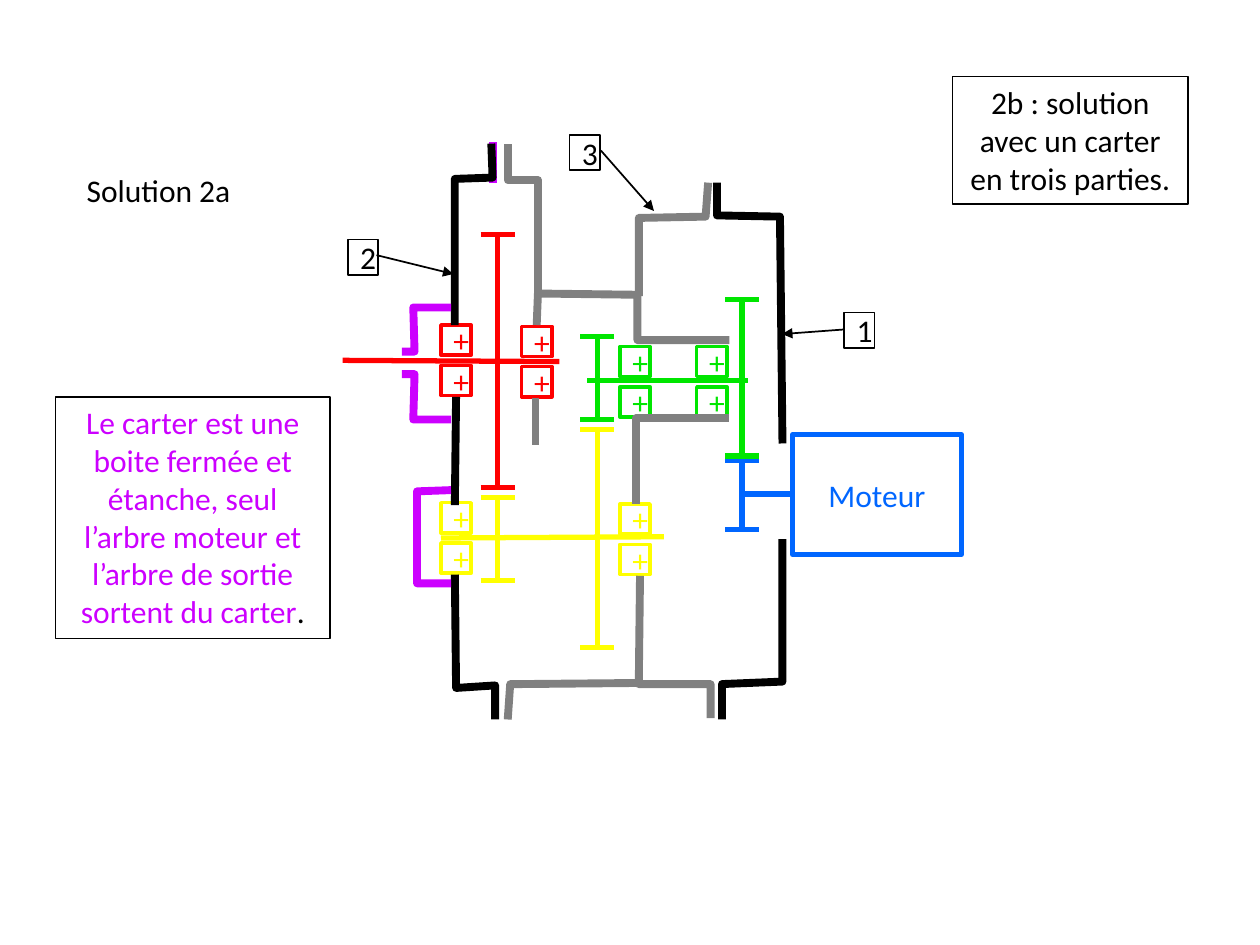
from dataclasses import dataclass

from lxml import etree
from pptx import Presentation
from pptx.dml.color import RGBColor
from pptx.enum.shapes import MSO_CONNECTOR, MSO_SHAPE
from pptx.enum.text import MSO_ANCHOR, MSO_AUTO_SIZE, PP_ALIGN
from pptx.oxml.ns import qn
from pptx.util import Inches, Pt

STRAIGHT = MSO_CONNECTOR.STRAIGHT
RECT, CALLOUT = MSO_SHAPE.RECTANGLE, MSO_SHAPE.LINE_CALLOUT_1
TOP, MIDDLE = MSO_ANCHOR.TOP, MSO_ANCHOR.MIDDLE
LEFT, CENTER = PP_ALIGN.LEFT, PP_ALIGN.CENTER
GROW = MSO_AUTO_SIZE.SHAPE_TO_FIT_TEXT


@dataclass(frozen=True)
class Theme:
    font: str = "Calibri"
    size: float = 18
    black: str = "000000"
    white: str = "FFFFFF"
    grey: str = "808080"
    red: str = "FF0000"
    blue: str = "0066FF"
    green: str = "00E600"
    yellow: str = "FFFF00"
    violet: str = "CC00FF"
    thin: float = 0.75
    shaft: float = 3
    wall: float = 4.5


THEME = Theme()


def write(shape, *parts, anchor=MIDDLE, align=CENTER, wrap=True, grow=False):
    """Fill the shape with one paragraph of (text, colour) parts."""
    frame = shape.text_frame
    frame.word_wrap = wrap
    frame.vertical_anchor = anchor
    if grow:
        frame.auto_size = GROW
    para = frame.paragraphs[0]
    para.alignment = align
    for text, color in parts:
        run = para.add_run()
        run.text = text
        run.font.name = THEME.font
        run.font.size = Pt(THEME.size)
        run.font.color.rgb = RGBColor.from_string(color)


def stroke(shape, color, width):
    shape.line.color.rgb = RGBColor.from_string(color)
    shape.line.width = Pt(width)


def line(slide, x1, y1, x2, y2, color, width=THEME.shaft):
    item = slide.shapes.add_connector(
        STRAIGHT, Inches(x1), Inches(y1), Inches(x2), Inches(y2))
    stroke(item, color, width)
    etree.SubElement(item._element.spPr, qn("a:effectLst"))


def wall(slide, color, *points):
    """Draw one open run of the housing."""
    first, *rest = [(Inches(x), Inches(y)) for x, y in points]
    pen = slide.shapes.build_freeform(*first)
    pen.add_line_segments(rest, close=False)
    item = pen.convert_to_shape()
    item.shadow.inherit = False
    item.fill.background()
    stroke(item, color, THEME.wall)


def box(slide, x, y, w, h, color, width, kind=RECT, fill=THEME.white):
    item = slide.shapes.add_shape(
        kind, Inches(x), Inches(y), Inches(w), Inches(h))
    item.shadow.inherit = False
    if fill:
        item.fill.solid()
        item.fill.fore_color.rgb = RGBColor.from_string(fill)
    else:
        item.fill.background()
    stroke(item, color, width)
    return item


def gear(slide, x, top, bottom, color, half=0.135):
    line(slide, x, top, x, bottom, color)
    for y in (top, bottom):
        line(slide, x - half, y, x + half, y, color)


def bearing(slide, x, y, color, side=0.24, pitch=0.32):
    for row in range(2):
        item = box(slide, x, y + row * pitch, side, side, color, 2)
        write(item, ("+", color))


def callout(slide, label, x, y, *bends):
    item = box(slide, x, y, 0.24, 0.28, THEME.black, 1, kind=CALLOUT)
    for index, bend in enumerate(bends):
        item.adjustments[index] = bend
    etree.SubElement(item.line._get_or_add_ln(), qn("a:tailEnd"),
                     type="triangle")
    write(item, (label, THEME.black))


def note(slide, x, y, w, h, *parts):
    item = box(slide, x, y, w, h, THEME.black, THEME.thin, fill=None)
    write(item, *parts, anchor=TOP, grow=True)


def gears(slide):
    t = THEME
    gear(slide, 3.95, 1.86, 3.87, t.red)

    # Motor pinion and shaft
    gear(slide, 5.89, 3.65, 4.2, t.blue)
    line(slide, 5.89, 3.92, 6.84, 3.92, t.blue)

    # Intermediate shaft
    line(slide, 4.66, 3.02, 5.94, 3.02, t.green)
    gear(slide, 5.89, 2.38, 3.62, t.green)
    gear(slide, 4.74, 2.67, 3.33, t.green)

    motor = box(slide, 6.29, 3.45, 1.34, 0.95, t.blue, t.shaft)
    write(motor, ("Moteur", t.blue))

    for x, y, color in ((3.5, 2.58, t.red), (5.53, 2.75, t.green),
                        (4.92, 2.75, t.green), (4.92, 4, t.yellow),
                        (3.5, 3.99, t.yellow), (4.14, 2.59, t.red)):
        bearing(slide, x, y, color)

    # Output shaft, then second reduction stage
    line(slide, 2.72, 2.86, 4.44, 2.87, t.red)
    gear(slide, 4.74, 3.41, 5.14, t.yellow)
    line(slide, 3.5, 4.27, 5.27, 4.26, t.yellow)
    gear(slide, 3.95, 3.95, 4.61, t.yellow)


def housing(slide):
    t = THEME

    # Outer halves: right (1), then left (2)
    for points in (
            ((5.69, 1.45), (5.69, 1.71), (6.19, 1.72), (6.21, 3.52)),
            ((6.21, 4.28), (6.21, 5.41), (5.73, 5.43), (5.73, 5.71)),
            ((3.9, 1.14), (3.91, 1.41), (3.61, 1.42), (3.61, 2.58)),
            ((3.61, 4.56), (3.62, 5.46), (3.93, 5.44), (3.93, 5.71)),
            ((3.62, 3.15), (3.61, 4.01))):
        wall(slide, t.black, *points)

    # Middle part (3)
    for points in (
            ((5.79, 2.7), (5.06, 2.7), (5.06, 2.34), (4.27, 2.33),
             (4.26, 2.58)),
            ((5.64, 5.7), (5.64, 5.43), (5.07, 5.43), (5.08, 4.57)),
            ((5.05, 4), (5.05, 3.32), (5.79, 3.32)),
            ((4.27, 2.33), (4.27, 1.43), (4.03, 1.43), (4.03, 1.14)),
            ((5.07, 2.35), (5.07, 1.73), (5.6, 1.72), (5.62, 1.45)),
            ((5.1, 5.42), (4.05, 5.43), (4.03, 5.71))):
        wall(slide, t.grey, *points)
    line(slide, 4.25, 3.16, 4.25, 3.53, t.grey, t.wall)


def covers(slide):
    color = THEME.violet
    wall(slide, color, (3.58, 3.89), (3.31, 3.9), (3.31, 4.63), (3.58, 4.63))
    for outer, inner in ((2.44, 2.79), (3.33, 2.97)):
        wall(slide, color, (3.58, outer), (3.28, outer), (3.29, inner),
             (3.19, inner))


def main():
    t = THEME
    deck = Presentation()
    deck.slide_width, deck.slide_height = Inches(10), Inches(7.5)
    slide = deck.slides.add_slide(deck.slide_layouts[6])

    # Mechanism
    gears(slide)
    line(slide, 3.91, 1.13, 3.91, 1.45, t.violet, t.wall)
    name = slide.shapes.add_textbox(
        Inches(0.59), Inches(1.31), Inches(1.36), Inches(0.4))
    write(name, ("Solution 2a", t.black), anchor=TOP, align=LEFT,
          wrap=False, grow=True)
    housing(slide)

    # Part numbers and notes
    callout(slide, "1", 6.7, 2.48, 0.483, -0.008, 0.613, -2.054)
    callout(slide, "2", 2.76, 1.9, 0.446, 0.953, 0.982, 3.492)
    callout(slide, "3", 4.52, 1.07, 0.446, 1.04, 2.16, 2.793)
    note(slide, 7.56, 0.61, 1.87, 1.01,
         ("2b : solution avec un carter en trois parties.", t.black))
    covers(slide)
    note(slide, 0.44, 3.15, 2.18, 1.92,
         ("Le carter est une boite fermée et étanche, seul l’arbre moteur "
          "et l’arbre de sortie sortent du carter", t.violet),
         (".", t.black))
    deck.save("out.pptx")


if __name__ == "__main__":
    main()
